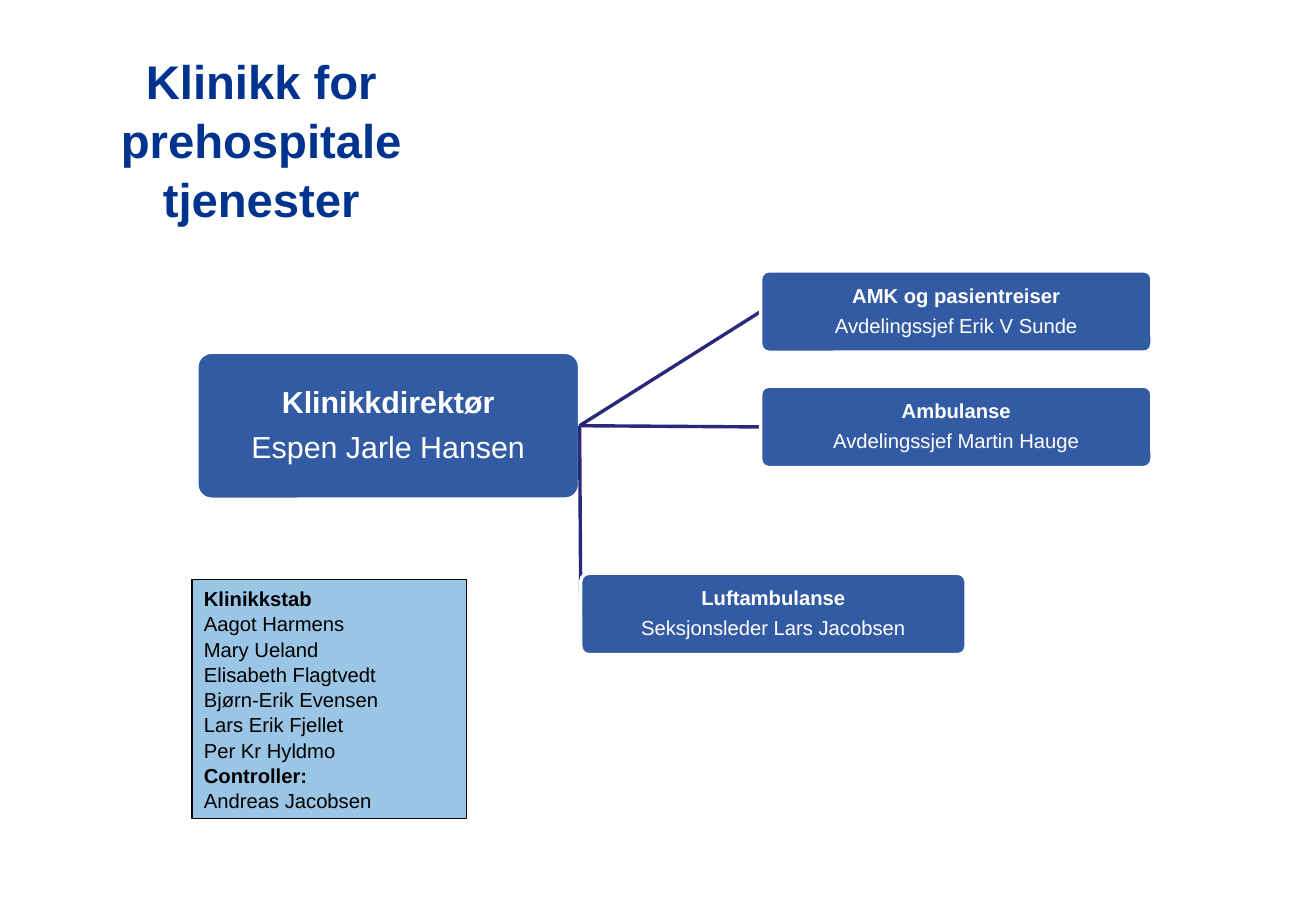
from dataclasses import dataclass

import lxml.etree
import pptx
import pptx.dml.color
import pptx.enum.shapes
import pptx.enum.text
import pptx.oxml.ns
import pptx.util

EMU_PER_PX = 9144  # 100 px to the inch
FONT = "Arial"
NAVY, LINE_BLUE, SKY = "00338D", "29297B", "7AB2DC"
WHITE, BLACK = "FFFFFF", "000000"
ALIGN = pptx.enum.text.PP_ALIGN
ANCHOR = pptx.enum.text.MSO_ANCHOR
SHAPE = pptx.enum.shapes.MSO_SHAPE
RIGHT_SIDE, LEFT_SIDE = 3, 1


@dataclass(frozen=True)
class Unit:
    heading: str
    leader: str
    left: int
    top: int
    width: int
    height: int
    size: int = 12


@dataclass(frozen=True)
class Line:
    text: str
    bold: bool = False


DIRECTOR = Unit("Klinikkdirektør", "Espen Jarle Hansen", 162, 290, 315, 121, 18)
DEPARTMENTS = [
    Unit("AMK og pasientreiser", "Avdelingssjef Erik V Sunde", 626, 223, 322, 67),
    Unit("Ambulanse", "Avdelingssjef Martin Hauge", 626, 318, 322, 67),
    Unit("Luftambulanse", "Seksjonsleder Lars Jacobsen", 478, 472, 317, 67),
]
STAFF = [
    Line("Klinikkstab", True),
    Line("Aagot Harmens"),
    Line("Mary Ueland"),
    Line("Elisabeth Flagtvedt"),
    Line("Bjørn-Erik Evensen"),
    Line("Lars Erik Fjellet"),
    Line("Per Kr Hyldmo"),
    Line("Controller:", True),
    Line("Andreas Jacobsen"),
]


def px(length: int) -> pptx.util.Emu:
    return pptx.util.Emu(length * EMU_PER_PX)


def color(hex_code: str) -> pptx.dml.color.RGBColor:
    return pptx.dml.color.RGBColor.from_string(hex_code)


def paint(shape, fill: str, opacity: int, line: str, line_width: float) -> None:
    shape.shadow.inherit = False
    shape.fill.solid()
    shape.fill.fore_color.rgb = color(fill)
    tint = shape.fill._xPr.find(".//" + pptx.oxml.ns.qn("a:srgbClr"))
    lxml.etree.SubElement(tint, pptx.oxml.ns.qn("a:alpha"), val=str(opacity * 1000))
    shape.line.color.rgb = color(line)
    shape.line.width = pptx.util.Pt(line_width)


def write(shape, lines: list[Line], size: int, hex_code: str, align, anchor,
          spacing: float, after: float = 0, inset: tuple[int, int] = (10, 5)) -> None:
    frame = shape.text_frame
    frame.word_wrap = True
    frame.vertical_anchor = anchor
    frame.margin_left = frame.margin_right = px(inset[0])
    frame.margin_top = frame.margin_bottom = px(inset[1])
    for index, line in enumerate(lines):
        paragraph = frame.add_paragraph() if index else frame.paragraphs[0]
        paragraph.alignment = align
        paragraph.line_spacing = spacing
        paragraph.space_after = pptx.util.Pt(after)
        run = paragraph.add_run()
        run.text = line.text
        run.font.name = FONT
        run.font.size = pptx.util.Pt(size)
        run.font.bold = line.bold
        run.font.color.rgb = color(hex_code)


def add_unit(slide, unit: Unit):
    box = slide.shapes.add_shape(SHAPE.ROUNDED_RECTANGLE, px(unit.left), px(unit.top),
                                 px(unit.width), px(unit.height))
    box.adjustments[0] = 0.1
    paint(box, NAVY, 80, WHITE, 2)
    write(box, [Line(unit.heading, True), Line(unit.leader)], unit.size, WHITE,
          ALIGN.CENTER, ANCHOR.MIDDLE, 0.9, round(unit.size * 0.4, 1), (1, 1))
    return box


def add_branch(slide, director_box, department: Unit) -> None:
    # The line lies behind the department box, so it is added first
    branch = slide.shapes.add_connector(pptx.enum.shapes.MSO_CONNECTOR.STRAIGHT, 0, 0, 0, 0)
    branch.line.color.rgb = color(LINE_BLUE)
    branch.line.width = pptx.util.Pt(2)
    lxml.etree.SubElement(branch._element.spPr, pptx.oxml.ns.qn("a:effectLst"))
    department_box = add_unit(slide, department)
    branch.begin_connect(director_box, RIGHT_SIDE)
    branch.end_connect(department_box, LEFT_SIDE)


def main() -> None:
    deck = pptx.Presentation()
    deck.slide_width, deck.slide_height = px(1083), px(750)
    slide = deck.slides.add_slide(deck.slide_layouts[6])

    # Organisation chart
    director_box = add_unit(slide, DIRECTOR)
    for department in DEPARTMENTS:
        add_branch(slide, director_box, department)

    # Title
    title = slide.shapes.add_textbox(px(38), px(36), px(354), px(173))
    write(title, [Line("Klinikk for prehospitale tjenester", True)], 28, NAVY,
          ALIGN.CENTER, ANCHOR.TOP, 1.04)

    # Clinic staff
    staff_box = slide.shapes.add_shape(SHAPE.RECTANGLE, px(158), px(477), px(226), px(197))
    paint(staff_box, SKY, 75, BLACK, 0.75)
    write(staff_box, STAFF, 12, BLACK, ALIGN.LEFT, ANCHOR.TOP, 1.04)

    deck.save("out.pptx")


if __name__ == "__main__":
    main()
